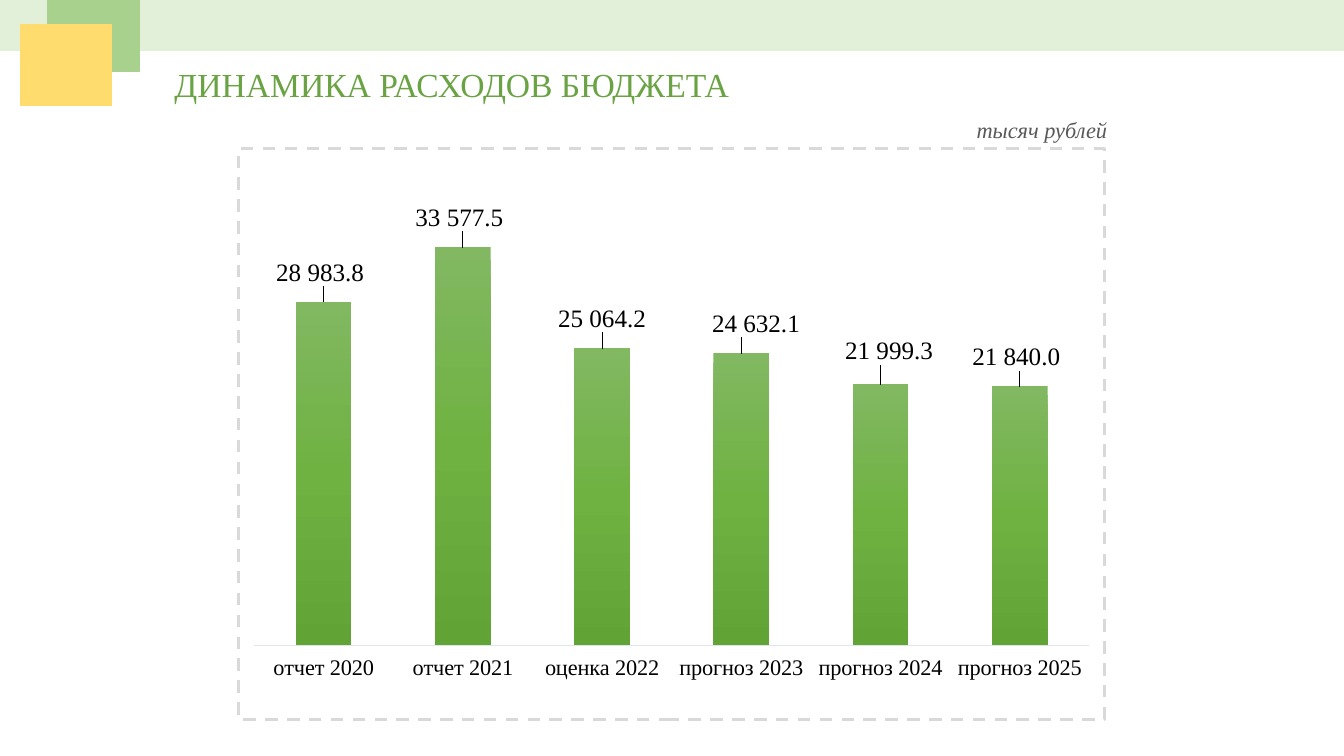
"""Builds the slide on budget expenditure with a column chart of yearly totals."""
from pptx import Presentation
from pptx.chart.data import CategoryChartData
from pptx.dml.color import RGBColor
from pptx.enum.chart import XL_CHART_TYPE as ChartType, XL_LABEL_POSITION as LabelPos
from pptx.enum.chart import XL_TICK_LABEL_POSITION as TickLabels, XL_TICK_MARK as TickMark
from pptx.enum.dml import MSO_LINE as Dash
from pptx.enum.shapes import MSO_SHAPE as Shape
from pptx.enum.text import MSO_ANCHOR as Anchor, MSO_AUTO_SIZE as AutoSize, PP_ALIGN as Align
from pptx.oxml import parse_xml
from pptx.oxml.ns import nsdecls
from pptx.util import Pt

TITLE_GREEN = RGBColor(0x6A, 0xA3, 0x43)
PALE_GREEN = RGBColor(0xE2, 0xF0, 0xD9)
LEAF_GREEN = RGBColor(0xA9, 0xD1, 0x8E)
YELLOW = RGBColor(0xFF, 0xDC, 0x6D)
GRAY = RGBColor(0x59, 0x59, 0x59)
AXIS_GRAY = RGBColor(0xE0, 0xE5, 0xEB)
BORDER_GRAY = RGBColor(0xD9, 0xD9, 0xD9)
BLACK = RGBColor(0, 0, 0)
BAR_STOPS = [(0, RGBColor(0x81, 0xB8, 0x61)), (50, RGBColor(0x6F, 0xB2, 0x42)),
             (100, RGBColor(0x62, 0xA3, 0x36))]
SERIF = "Times New Roman"
NUMBER_FORMAT = r"#\ ##0.0"


def write(box, text, size, color, italic=False):
    frame = box.text_frame
    frame.text = text
    frame.word_wrap = False
    frame.auto_size = AutoSize.NONE
    frame.vertical_anchor = Anchor.TOP
    paragraph = frame.paragraphs[0]
    paragraph.alignment = Align.LEFT
    font = paragraph.runs[0].font
    font.name, font.size, font.italic = SERIF, Pt(size), italic
    font.color.rgb = color


def manual_layout(**settings):
    parts = "".join(f'<c:{key} val="{value}"/>' for key, value in settings.items())
    return parse_xml(f'<c:layout {nsdecls("c")}><c:manualLayout>{parts}'
                     '</c:manualLayout></c:layout>')


prs = Presentation()
prs.slide_width, prs.slide_height = Pt(960), Pt(540)
slide = prs.slides.add_slide(prs.slide_layouts[5])

title = slide.shapes.title
title.left, title.top, title.width, title.height = Pt(117.4), Pt(41.8), Pt(421), Pt(36)
write(title, "ДИНАМИКА РАСХОДОВ БЮДЖЕТА", size=24, color=TITLE_GREEN)

for left, top, width, height, color in [(0, 0, 960, 36, PALE_GREEN),
                                        (33.8, 0, 65.5, 51.1, LEAF_GREEN),
                                        (15.1, 18, 64.8, 57.6, YELLOW)]:
    block = slide.shapes.add_shape(Shape.RECTANGLE, Pt(left), Pt(top), Pt(width), Pt(height))
    block.shadow.inherit = False
    block.fill.solid()
    block.fill.fore_color.rgb = color
    block.line.color.rgb = color
    block.line.width = Pt(1)

expenses = CategoryChartData(number_format=NUMBER_FORMAT)
expenses.categories = ["отчет 2020", "отчет 2021", "оценка 2022",
                       "прогноз 2023", "прогноз 2024", "прогноз 2025"]
expenses.add_series("Series 1", [28983.8, 33577.5, 25064.2, 24632.1, 21999.3, 21840.0])
chart = slide.shapes.add_chart(ChartType.COLUMN_CLUSTERED, Pt(169.2), Pt(105.1),
                               Pt(620.6), Pt(409.7), expenses).chart
chart.has_legend = False
chart.has_title = False
chart.font.name, chart.font.size = "Calibri", Pt(10)
chart.font.color.rgb = BLACK

years = chart.category_axis
years.major_tick_mark = TickMark.NONE
years.tick_label_position = TickLabels.LOW
years.tick_labels.font.name, years.tick_labels.font.size = SERIF, Pt(16)
years.tick_labels.font.color.rgb = BLACK
years.format.line.color.rgb = AXIS_GRAY
years.format.line.width = Pt(0.75)
amounts = chart.value_axis
amounts.minimum_scale, amounts.maximum_scale = 0, 40000
amounts.has_major_gridlines = False
amounts.tick_labels.number_format = NUMBER_FORMAT
amounts.tick_labels.number_format_is_linked = False
amounts.visible = False

plot = chart.plots[0]
plot.gap_width = 150
plot.vary_by_categories = False
bars = plot.series[0]
bars.format.fill.background()
no_fill = bars._element.xpath("c:spPr/a:noFill")[0]
stops = "".join(f'<a:gs pos="{pos * 1000}"><a:srgbClr val="{color}"/></a:gs>'
                for pos, color in BAR_STOPS)
no_fill.getparent().replace(no_fill, parse_xml(
    f'<a:gradFill {nsdecls("a")} rotWithShape="1"><a:gsLst>{stops}</a:gsLst>'
    '<a:lin ang="5400000" scaled="0"/></a:gradFill>'))

labels = bars.data_labels
labels.show_value = True
labels.position = LabelPos.OUTSIDE_END
labels.number_format, labels.number_format_is_linked = NUMBER_FORMAT, False
labels.font.name, labels.font.size = SERIF, Pt(18)
labels.font.color.rgb = BLACK
label_shifts = [(-0.004, -0.02), (-0.004, -0.02), (0, -0.02),
                (0.017, -0.02), (0.01, -0.027), (-0.004, -0.02)]
for number, (shift_x, shift_y) in enumerate(label_shifts):
    label = bars.points[number].data_label
    label.font.name, label.font.size = SERIF, Pt(18)
    label.font.color.rgb = BLACK
    label.position = LabelPos.OUTSIDE_END
    index = bars._element.xpath(f"c:dLbls/c:dLbl/c:idx[@val='{number}']")[0]
    index.addnext(parse_xml(f'<c:numFmt {nsdecls("c")} formatCode="{NUMBER_FORMAT}" '
                            'sourceLinked="0"/>'))
    index.addnext(manual_layout(x=shift_x, y=shift_y))

plot_area = chart._chartSpace.xpath("c:chart/c:plotArea")[0]
for old_layout in plot_area.xpath("c:layout"):
    plot_area.remove(old_layout)
plot_area.insert(0, manual_layout(layoutTarget="inner", xMode="edge", yMode="edge",
                                  x=0.018, y=0.039, w=0.965, h=0.832))
plot_area.getparent().addnext(parse_xml(
    f'<c:spPr {nsdecls("c", "a")}><a:noFill/><a:ln w="{Pt(2.25)}"><a:solidFill>'
    f'<a:srgbClr val="{BORDER_GRAY}"/></a:solidFill>'
    f'<a:prstDash val="{Dash.to_xml(Dash.DASH)}"/></a:ln></c:spPr>'))

unit_note = slide.shapes.add_textbox(Pt(690.5), Pt(79.2), Pt(109.4), Pt(26.6))
write(unit_note, "тысяч рублей", size=16, color=GRAY, italic=True)

prs.save("out.pptx")
